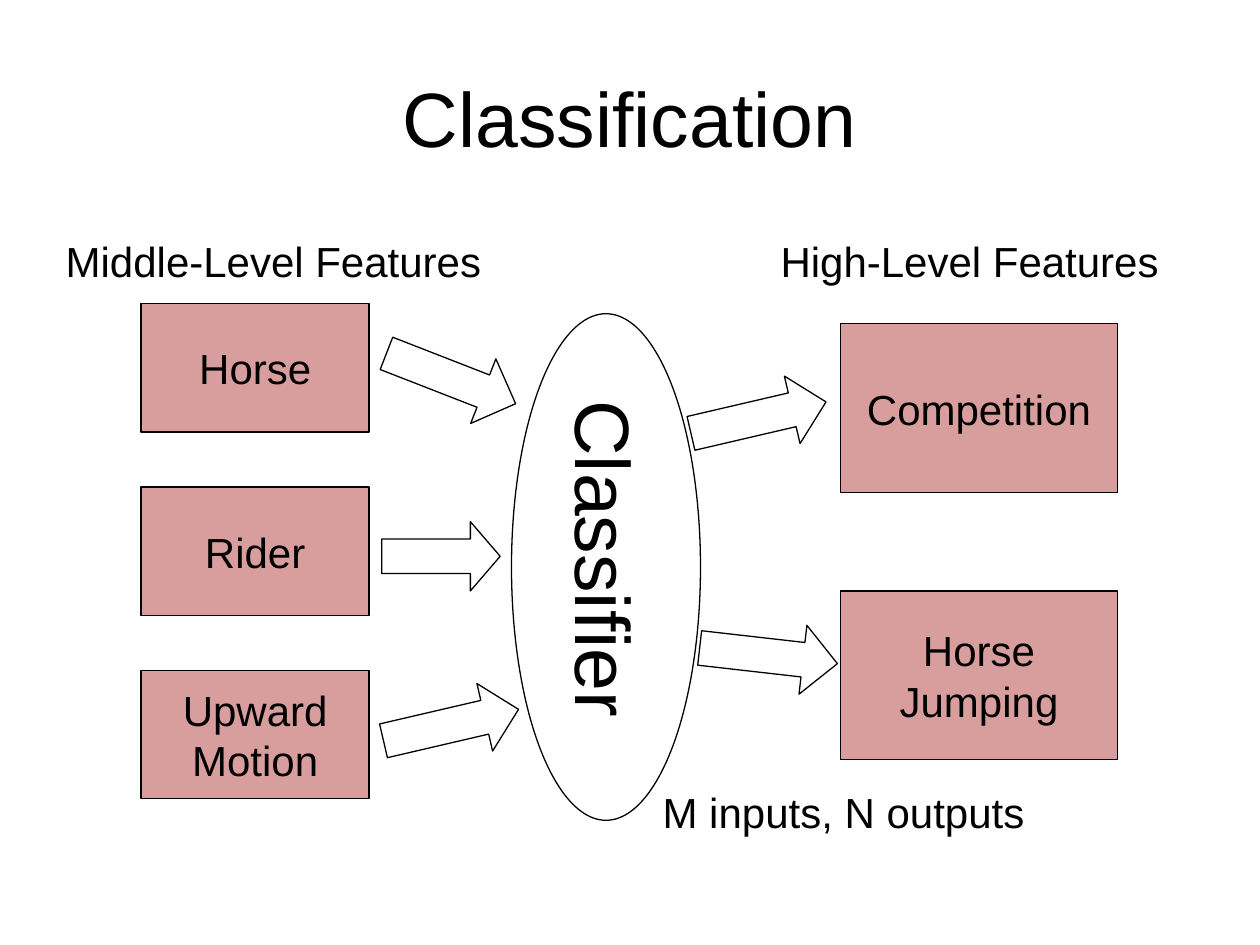
from lxml.etree import SubElement
from pptx import Presentation
from pptx.dml.color import RGBColor
from pptx.enum.shapes import MSO_SHAPE
from pptx.enum.text import MSO_ANCHOR, MSO_AUTO_SIZE, PP_ALIGN
from pptx.oxml.ns import qn
from pptx.util import Inches, Pt

BLACK = "000000"
DARK_RED = "990000"
BODY_FONT = {"name": "Arial", "size": Pt(24), "bold": False}
LARGE_FONT = {**BODY_FONT, "size": Pt(44)}

# Feature columns: left, top of first row, row step, box width, box height, labels
MIDDLE_LEVEL = (1.12, 2.41, 1.455, 1.81, 1.02, ["Horse", "Rider", "Upward\nMotion"])
HIGH_LEVEL = (6.67, 2.57, 2.12, 2.2, 1.34, ["Competition", "Horse\nJumping"])

ARROW_HEIGHT = 0.55
# Arrows: left, top, width, rotation, head length as a share of the height
ARROWS = [
    (3.03, 2.73, 1.1, 21.3, 0.5),
    (3.03, 4.14, 0.94, 0, 0.43),
    (3.03, 5.48, 1.1, 346.9, 0.5),
    (5.47, 3.04, 1.1, 346.9, 0.5),
    (5.55, 4.93, 1.1, 6.5, 0.5),
]

# Captions: left, top, width, wording
CAPTIONS = [
    (0.42, 1.82, 3.5, "Middle-Level Features"),
    (6.09, 1.82, 3.21, "High-Level Features"),
    (5.16, 6.19, 3.07, "M inputs, N outputs"),
]


def color(hex_string):
    return RGBColor.from_string(hex_string)


def write(frame, wording, font_format, anchor=MSO_ANCHOR.MIDDLE, wrap=False):
    frame.text = wording
    frame.word_wrap = wrap
    frame.vertical_anchor = anchor
    for paragraph in frame.paragraphs:
        paragraph.alignment = PP_ALIGN.CENTER
        for key, value in font_format.items():
            setattr(paragraph.font, key, value)
        paragraph.font.color.rgb = color(BLACK)


def add_outlined(shapes, preset, left, top, width, height):
    """Add an unfilled preset shape with a thin black line."""
    shape = shapes.add_shape(preset, *map(Inches, (left, top, width, height)))
    shape.shadow.inherit = False
    shape.fill.background()
    shape.line.color.rgb = color(BLACK)
    shape.line.width = Pt(0.75)
    return shape


def tint(shape, hex_string, opacity):
    """Fill a shape with a see-through colour; opacity is in percent."""
    shape.fill.solid()
    shape.fill.fore_color.rgb = color(hex_string)
    solid = shape.fill._xPr.find(qn("a:solidFill"))
    SubElement(solid[0], qn("a:alpha"), val=str(opacity * 1000))


def add_feature_column(slide, left, first_top, step, width, height, labels):
    column = slide.shapes.add_group_shape()
    for row, label in enumerate(labels):
        feature = add_outlined(column.shapes, MSO_SHAPE.RECTANGLE,
                               left, first_top + row * step, width, height)
        tint(feature, DARK_RED, 38)
        write(feature.text_frame, label, BODY_FONT)


def add_classifier(slide):
    classifier = add_outlined(slide.shapes, MSO_SHAPE.OVAL, 4.06, 2.49, 1.5, 4.02)
    write(classifier.text_frame, "Classifier", LARGE_FONT)
    classifier.text_frame._txBody.bodyPr.set("vert", "eaVert")


def add_arrow(slide, left, top, width, rotation, head_share):
    arrow = add_outlined(slide.shapes, MSO_SHAPE.RIGHT_ARROW,
                         left, top, width, ARROW_HEIGHT)
    arrow.rotation = rotation
    arrow.adjustments[1] = head_share


def add_caption(slide, left, top, width, wording):
    caption = slide.shapes.add_textbox(*map(Inches, (left, top, width, 0.5)))
    write(caption.text_frame, wording, BODY_FONT, MSO_ANCHOR.TOP)
    caption.text_frame.auto_size = MSO_AUTO_SIZE.SHAPE_TO_FIT_TEXT


def set_title(slide, wording):
    title = slide.shapes.title
    title.left, title.top, title.width, title.height = map(Inches, (0.5, 0.3, 9, 1.25))
    write(title.text_frame, wording, LARGE_FONT, wrap=True)


def main():
    deck = Presentation()
    deck.slide_width, deck.slide_height = Inches(10), Inches(7.5)
    slide = deck.slides.add_slide(deck.slide_layouts.get_by_name("Title Only"))
    set_title(slide, "Classification")
    add_feature_column(slide, *MIDDLE_LEVEL)
    add_classifier(slide)
    add_feature_column(slide, *HIGH_LEVEL)
    for arrow in ARROWS:
        add_arrow(slide, *arrow)
    for caption in CAPTIONS:
        add_caption(slide, *caption)
    deck.save("out.pptx")


if __name__ == "__main__":
    main()
